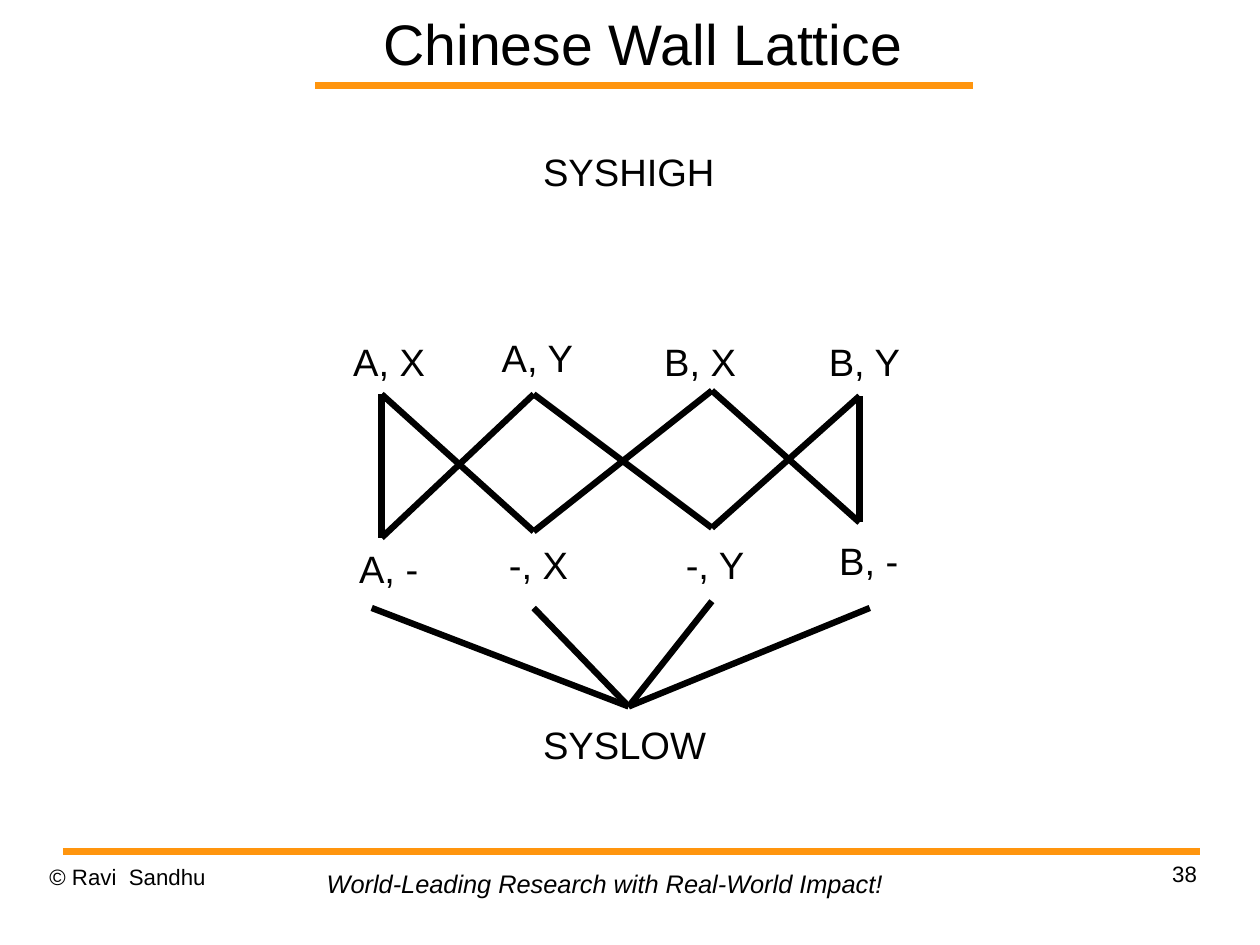
import itertools
from dataclasses import dataclass

import pptx
import pptx.dml.color
import pptx.enum.shapes
import pptx.enum.text
import pptx.oxml
import pptx.util

Cm = pptx.util.Cm
Pt = pptx.util.Pt
ALIGN = pptx.enum.text.PP_ALIGN
ANCHOR = pptx.enum.text.MSO_ANCHOR
FIT = pptx.enum.text.MSO_AUTO_SIZE


@dataclass(frozen=True)
class Theme:
    font: str = "Arial"
    ink: str = "000000"
    accent: str = "FF950E"
    title: float = 36
    label: float = 24
    tagline: float = 16
    footer: float = 14
    rule: float = 4.31
    edge: float = 4


THEME = Theme()

# label corner and lower anchor, in cm from the lattice corner
COMBINATIONS = {
    "A, X": ((0.17, 4.57), (0.98, 5.76)),
    "A, Y": ((3.47, 4.49), (4.36, 5.76)),
    "B, X": ((7.08, 4.57), (8.32, 5.68)),
    "B, Y": ((10.74, 4.57), (11.6, 5.8)),
}
# label corner, upper anchor and lower anchor
SINGLES = {
    "A, -": ((0.3, 9.17), (0.98, 8.95), (0.76, 10.51)),
    "-, X": ((3.63, 9.09), (4.36, 8.81), (4.36, 10.51)),
    "-, Y": ((7.56, 9.09), (8.32, 8.73), (8.32, 10.36)),
    "B, -": ((10.97, 9.01), (11.6, 8.61), (11.83, 10.51)),
}
SYSLOW_ANCHOR = (6.47, 12.7)


def add_line(slide, start, end, color, width):
    line = slide.shapes.add_connector(
        pptx.enum.shapes.MSO_CONNECTOR.STRAIGHT,
        *(Cm(value) for value in (*start, *end)))
    line.line.color.rgb = pptx.dml.color.RGBColor.from_string(color)
    line.line.width = Pt(width)
    properties = line._element.spPr
    properties.append(pptx.oxml.parse_xml(
        '<a:effectLst xmlns:a="http://schemas.openxmlformats.org/drawingml/2006/main"/>'))


def write(frame, text, size, insets=(0, 0), align=ALIGN.LEFT, spacing=None, italic=False):
    """Fill a text frame with one run; insets are (side, top and bottom) in cm."""
    frame.margin_left = frame.margin_right = Cm(insets[0])
    frame.margin_top = frame.margin_bottom = Cm(insets[1])
    paragraph = frame.paragraphs[0]
    paragraph.alignment = align
    if spacing:
        paragraph.line_spacing = spacing
    run = paragraph.add_run()
    run.text = text
    run.font.name = THEME.font
    run.font.size = Pt(size)
    run.font.italic = italic
    run.font.color.rgb = pptx.dml.color.RGBColor.from_string(THEME.ink)


def add_text(slide, box, text, size, wrap=True, **style):
    frame = slide.shapes.add_textbox(*(Cm(value) for value in box)).text_frame
    frame.word_wrap = wrap
    frame.auto_size = FIT.NONE if wrap else FIT.SHAPE_TO_FIT_TEXT
    write(frame, text, size, **style)


def add_heading(slide, left, top, width, height):
    title = slide.shapes.title
    title.left, title.top, title.width, title.height = (
        Cm(value) for value in (left, top, width, height))
    frame = title.text_frame
    frame.auto_size = FIT.NONE
    frame.vertical_anchor = ANCHOR.MIDDLE
    write(frame, "Chinese Wall Lattice", THEME.title, align=ALIGN.CENTER)
    rule_y = top + height
    add_line(slide, (left + 0.89, rule_y), (left + 15.5, rule_y), THEME.accent, THEME.rule)


def add_lattice(slide, left, top):
    def place(point):
        return left + point[0], top + point[1]

    def label(text, corner, width):
        add_text(slide, (*place(corner), width, 1.02), text, THEME.label,
                 wrap=False, insets=(0.18, 0.08), spacing=0.87)

    def edge(start, end):
        add_line(slide, place(start), place(end), THEME.ink, THEME.edge)

    label("SYSHIGH", (4.39, 0.35), 4.17)
    label("SYSLOW", (4.39, 13.1), 4.01)
    for name, (corner, _) in COMBINATIONS.items():
        label(name, corner, 2.01)
    for name, (corner, _, foot) in SINGLES.items():
        label(name, corner, 1.7)
        edge(foot, SYSLOW_ANCHOR)
    for upper, lower in itertools.product(COMBINATIONS, SINGLES):
        if lower.strip("-, ") in upper:
            edge(COMBINATIONS[upper][1], SINGLES[lower][1])


def add_footer(slide, left, top, width):
    add_line(slide, (left, top), (left + width, top), THEME.accent, THEME.rule)
    add_text(slide, (left - 0.3, top + 0.25, 6.53, 1.45), "© Ravi  Sandhu",
             THEME.footer, spacing=1.01)
    add_text(slide, (left + 5.61, top + 0.25, 12.9, 0.94),
             "World-Leading Research with Real-World Impact!", THEME.tagline,
             wrap=False, insets=(0.25, 0.13), italic=True)
    add_text(slide, (left + width - 6.6, top + 0.2, 6.53, 1.45), "38",
             THEME.footer, align=ALIGN.RIGHT, spacing=1.01)


def main():
    deck = pptx.Presentation()
    deck.slide_width, deck.slide_height = Cm(28), Cm(21)
    slide = deck.slides.add_slide(deck.slide_layouts.get_by_name("Title Only"))
    add_heading(slide, 6.12, 0, 16.33, 1.9)
    add_lattice(slide, 7.5, 3)
    add_footer(slide, 1.4, 18.92, 25.27)
    deck.save("out.pptx")


if __name__ == "__main__":
    main()
